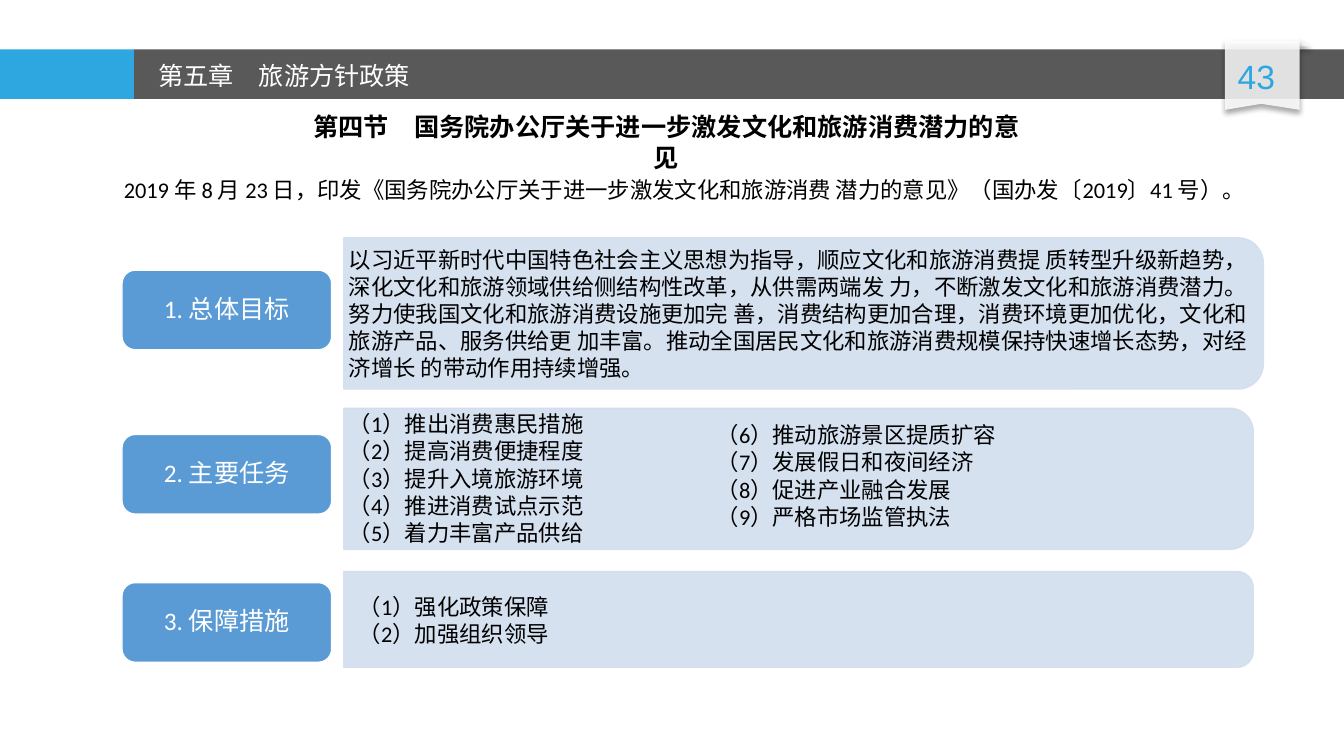
"""Build the slide on the State Council opinion about culture and tourism spending."""
from dataclasses import dataclass, field
from typing import Any

from lxml.etree import SubElement
from pptx import Presentation
from pptx.dml.color import RGBColor
from pptx.enum.shapes import MSO_SHAPE
from pptx.enum.text import MSO_ANCHOR, PP_ALIGN
from pptx.oxml.ns import qn
from pptx.util import Pt

PX = 9144
BLUE = RGBColor(0x2E, 0xA7, 0xE0)
GRAY = RGBColor(0x59, 0x59, 0x59)
SKY = RGBColor(0x5B, 0x9B, 0xD5)
PALE = RGBColor(0xD2, 0xDE, 0xEF)
SNOW = RGBColor(0xF8, 0xF8, 0xF8)
WHITE = RGBColor(0xFF, 0xFF, 0xFF)
BLACK = RGBColor(0x00, 0x00, 0x00)

TIGHT = {"margin_left": 5 * PX, "margin_right": 5 * PX, "margin_top": 2 * PX,
         "margin_bottom": 2 * PX, "vertical_anchor": MSO_ANCHOR.MIDDLE}
LIST = {"line_spacing": 0.9, "space_after": Pt(2.2)}
MID = {"alignment": PP_ALIGN.CENTER}


@dataclass
class Box:
    """Place and size in px."""
    x: int
    y: int
    w: int
    h: int

    def emu(self) -> tuple[int, int, int, int]:
        """Give the box in EMU."""
        return self.x * PX, self.y * PX, self.w * PX, self.h * PX


@dataclass
class Note:
    """A text box with its formats."""
    box: Box
    lines: list[str]
    size: int = 16
    color: RGBColor = BLACK
    face: str = "Calibri"
    bold: bool = False
    para: dict[str, Any] = field(default_factory=dict)
    frame: dict[str, Any] = field(default_factory=dict)


@dataclass
class Row:
    """A label with the panel to its right."""
    title: str
    top: int
    panel: Box


def apply(target: Any, formats: dict[str, Any]) -> None:
    """Set each named attribute."""
    for name, value in formats.items():
        setattr(target, name, value)


def write(frame: Any, note: Note) -> None:
    """Fill a text frame from a note."""
    apply(frame, {"word_wrap": True, **note.frame})
    for i, line in enumerate(note.lines):
        para = frame.add_paragraph() if i else frame.paragraphs[0]
        apply(para, note.para)
        run = para.add_run()
        run.text = line
        apply(run.font, {"name": note.face, "size": Pt(note.size), "bold": note.bold})
        run.font.color.rgb = note.color


def paint(shape: Any, fill: RGBColor, line: RGBColor | None = None, alpha: int = 100) -> None:
    """Set fill, outline and opacity."""
    shape.shadow.inherit = False
    shape.fill.solid()
    shape.fill.fore_color.rgb = fill
    if line is None:
        shape.line.fill.background()
    else:
        shape.line.color.rgb = line
        shape.line.width = Pt(1)
    if alpha < 100:
        for color in list(shape._element.spPr.iter(qn("a:srgbClr"))):
            SubElement(color, qn("a:alpha"), val=str(alpha * 1000))


def shade(shape: Any) -> None:
    """Add a soft shadow below a shape."""
    effect = shape._element.spPr.find(qn("a:effectLst"))
    outer = SubElement(effect, qn("a:outerShdw"), blurRad=str(Pt(4)), dist=str(Pt(3)),
                       dir="5400000", algn="t", rotWithShape="0")
    color = SubElement(outer, qn("a:srgbClr"), val=str(BLACK))
    SubElement(color, qn("a:alpha"), val="40000")


def panel(shapes: Any, box: Box) -> None:
    """Draw a panel with its right corners rounded."""
    x, y, w, h = box.emu()
    shift = (w - h) // 2
    shape = shapes.add_shape(MSO_SHAPE.ROUND_2_SAME_RECTANGLE, x + shift, y - shift, h, w)
    shape.rotation = 90
    paint(shape, PALE, PALE, 90)


def label(shapes: Any, row: Row) -> None:
    """Draw the label of a row."""
    box = Box(121, row.top, 208, 79)
    shape = shapes.add_shape(MSO_SHAPE.ROUNDED_RECTANGLE, *box.emu())
    paint(shape, SKY, WHITE)
    write(shape.text_frame, Note(box, [row.title], 18, WHITE,
                                 para={**MID, "line_spacing": 0.9}, frame=TIGHT))


def ribbon(shapes: Any) -> None:
    """Draw the page marker with its fold."""
    fold = shapes.add_shape(MSO_SHAPE.RIGHT_TRIANGLE, *Box(1289, 38, 12, 8).emu())
    paint(fold, SNOW, alpha=85)
    pen = shapes.build_freeform(1215, 109, PX)
    pen.add_line_segments([(1215, 40), (1289, 40), (1289, 109), (1251, 103)])
    flag = pen.convert_to_shape()
    paint(flag, WHITE, alpha=85)
    for shape in (fold, flag):
        shade(shape)


BARS = [(Box(0, 49, 133, 49), BLUE), (Box(133, 49, 1200, 49), GRAY)]

ROWS = [
    Row("1. 总体目标", 268, Box(341, 236, 912, 150)),
    Row("2. 主要任务", 431, Box(341, 405, 902, 140)),
    Row("3. 保障措施", 578, Box(341, 567, 902, 95)),
]

GOAL = (
    "以习近平新时代中国特色社会主义思想为指导，顺应文化和旅游消费提 质转型升级新趋势，"
    "深化文化和旅游领域供给侧结构性改革，从供需两端发 力，不断激发文化和旅游消费潜力。"
    "努力使我国文化和旅游消费设施更加完 善，消费结构更加合理，消费环境更加优化，"
    "文化和旅游产品、服务供给更 加丰富。推动全国居民文化和旅游消费规模保持快速增长态势，"
    "对经济增长 的带动作用持续增强。"
)

NOTES = [
    Note(Box(1195, 51, 102, 50), ["43"], 24, BLUE, "Arial", para=MID),
    Note(Box(147, 55, 504, 40), ["第五章　旅游方针政策"], 18, WHITE, "Noto Sans CJK SC"),
    Note(Box(291, 106, 740, 40), ["第四节　国务院办公厅关于进一步激发文化和旅游消费潜力的意见"],
         18, bold=True, para=MID),
    Note(Box(113, 170, 1220, 37),
         ["2019 年 8 月 23 日，印发《国务院办公厅关于进一步激发文化和旅游消费 潜力的意见》"
          "（国办发〔2019〕41 号）。"]),
    Note(Box(341, 243, 905, 136), [GOAL], frame=TIGHT),
    Note(Box(341, 413, 352, 126),
         ["（1）推出消费惠民措施", "（2）提高消费便捷程度", "（3）提升入境旅游环境",
          "（4）推进消费试点示范", "（5）着力丰富产品供给"], para=LIST, frame=TIGHT),
    Note(Box(701, 416, 410, 119),
         ["（6）推动旅游景区提质扩容", "（7）发展假日和夜间经济", "（8）促进产业融合发展",
          "（9）严格市场监管执法"], para=LIST),
    Note(Box(351, 574, 857, 86), ["（1）强化政策保障", "（2）加强组织领导"],
         para=LIST, frame=TIGHT),
]


def main() -> None:
    """Build and save the slide."""
    deck = Presentation()
    apply(deck, {"slide_width": 1333 * PX, "slide_height": 750 * PX})
    shapes = deck.slides.add_slide(deck.slide_layouts[6]).shapes
    for box, color in BARS:
        paint(shapes.add_shape(MSO_SHAPE.RECTANGLE, *box.emu()), color)
    ribbon(shapes)
    for row in ROWS:
        panel(shapes, row.panel)
        label(shapes, row)
    for note in NOTES:
        write(shapes.add_textbox(*note.box.emu()).text_frame, note)
    deck.save("out.pptx")


if __name__ == "__main__":
    main()
